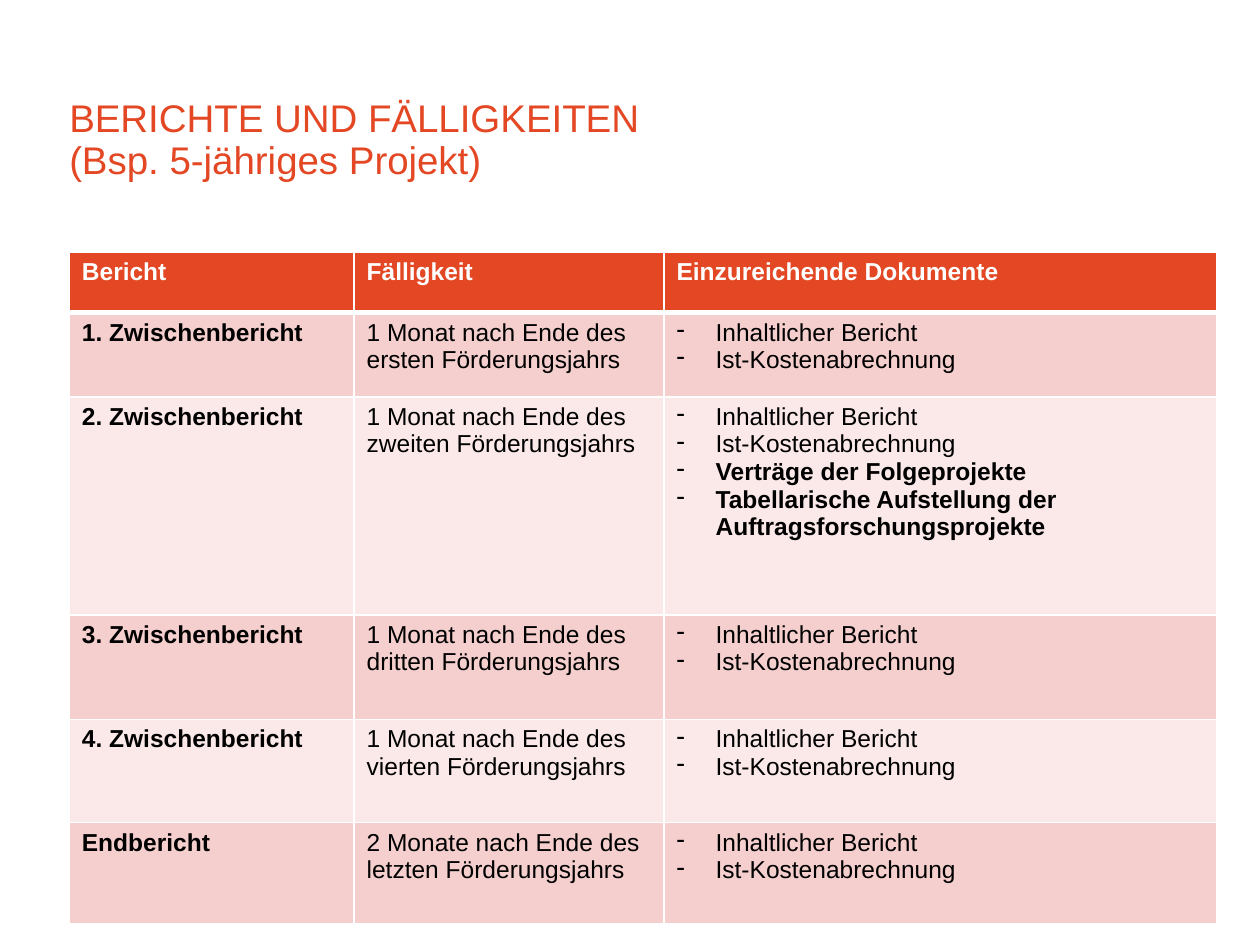
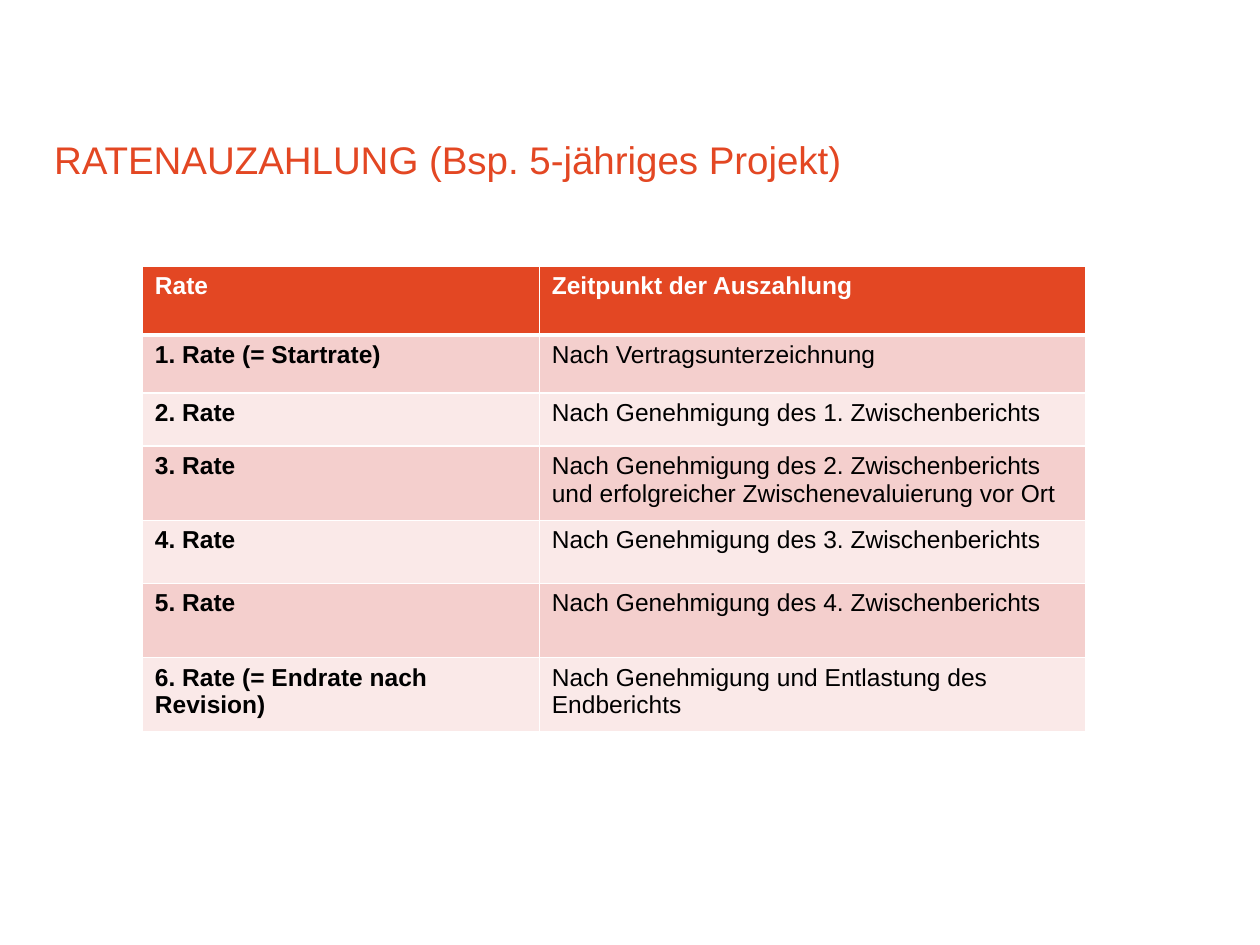
from dataclasses import dataclass

from lxml.etree import SubElement
from pptx import Presentation
from pptx.dml.color import RGBColor
from pptx.enum.text import MSO_VERTICAL_ANCHOR as Anchor
from pptx.oxml.ns import qn
from pptx.util import Emu, Inches, Pt

SLIDE_WIDTH, SLIDE_HEIGHT = Inches(10), Inches(7.5)
COLUMN, ROW = SLIDE_WIDTH / 100, SLIDE_HEIGHT / 75
FONT = "Arial"
ACCENT, WHITE, BLACK = "E34723", "FFFFFF", "000000"
BANDS = ("F4CFCD", "FAE9E8")
TITLE_TOP, TITLE_WIDTH, TITLE_HEIGHT = 6.9, 78.3, 7.6
BULLET_INDENT = 3.1


@dataclass(frozen=True)
class Entry:
    text: str
    bold: bool = False
    bullet: bool = False


@dataclass(frozen=True)
class Schedule:
    left: float
    top: float
    columns: tuple[float, ...]
    rows: tuple[float, ...]
    headings: tuple[str, ...]
    body: list[tuple[tuple[Entry, ...], ...]]


@dataclass(frozen=True)
class Page:
    title: str
    title_left: float
    schedule: Schedule


def color(value: str) -> RGBColor:
    return RGBColor.from_string(value)


def across(columns: float) -> Emu:
    return Emu(round(columns * COLUMN))


def down(rows: float) -> Emu:
    return Emu(round(rows * ROW))


def style_font(font, size: float, ink: str, bold: bool = False) -> None:
    font.name, font.size, font.bold = FONT, Pt(size), bold
    font.color.rgb = color(ink)


def add_title(slide, text: str, left: float) -> None:
    title = slide.shapes.add_textbox(
        across(left), down(TITLE_TOP), across(TITLE_WIDTH), down(TITLE_HEIGHT))
    frame = title.text_frame
    frame.word_wrap, frame.vertical_anchor = True, Anchor.BOTTOM
    frame.margin_left = frame.margin_right = 0
    frame.margin_top = frame.margin_bottom = 0
    frame.text = text
    heading = frame.paragraphs[0]
    heading.line_spacing = Pt(24)
    for run in heading.runs:
        style_font(run.font, 22, ACCENT)


def add_border(cell, side: str, points: float) -> None:
    border = SubElement(cell._tc.get_or_add_tcPr(), qn(f"a:ln{side}"), w=str(Pt(points)))
    fill = SubElement(border, qn("a:solidFill"))
    SubElement(fill, qn("a:srgbClr"), val=WHITE)


def add_bullet(paragraph) -> None:
    properties = paragraph._p.get_or_add_pPr()
    properties.set("marL", str(across(BULLET_INDENT)))
    properties.set("indent", str(-across(BULLET_INDENT)))
    SubElement(properties, qn("a:buFontTx"))
    SubElement(properties, qn("a:buChar"), char="-")


def fill_cell(cell, entries: tuple[Entry, ...], row: int) -> None:
    widths = {"L": 1, "R": 1, "T": 3 if row == 1 else 1, "B": 3 if row == 0 else 1}
    for side, points in widths.items():
        add_border(cell, side, points)
    cell.fill.solid()
    cell.fill.fore_color.rgb = color(BANDS[(row - 1) % 2] if row else ACCENT)
    cell.margin_left = cell.margin_right = across(1)
    cell.margin_top = cell.margin_bottom = down(0.5)
    cell.text_frame.text = "\n".join(entry.text for entry in entries)
    for paragraph, entry in zip(cell.text_frame.paragraphs, entries):
        if entry.bullet:
            add_bullet(paragraph)
        for run in paragraph.runs:
            style_font(run.font, 14, BLACK if row else WHITE, entry.bold)


def add_schedule(slide, schedule: Schedule) -> None:
    table = slide.shapes.add_table(
        len(schedule.rows), len(schedule.columns),
        across(schedule.left), down(schedule.top),
        across(sum(schedule.columns)), down(sum(schedule.rows))).table
    table.horz_banding = False
    for column, width in zip(table.columns, schedule.columns):
        column.width = across(width)
    for row, height in zip(table.rows, schedule.rows):
        row.height = down(height)
    headings = tuple((Entry(text, bold=True),) for text in schedule.headings)
    for row, contents in enumerate([headings, *schedule.body]):
        for column, entries in enumerate(contents):
            fill_cell(table.cell(row, column), entries, row)


def report(name: str, due: str, *extras: str) -> tuple[tuple[Entry, ...], ...]:
    standard = ("Inhaltlicher Bericht", "Ist-Kostenabrechnung")
    documents = [Entry(text, bullet=True) for text in standard]
    documents += [Entry(text, bold=True, bullet=True) for text in extras]
    return (Entry(name, bold=True),), (Entry(due),), tuple(documents)


def instalment(name: str, payout: str) -> tuple[tuple[Entry, ...], ...]:
    return (Entry(name, bold=True),), (Entry(payout),)


REPORTS = Schedule(
    left=5.5, top=20,
    columns=(22.6, 24.6, 43.9),
    rows=(4.8, 6.7, 17.3, 8.3, 8.2, 8),
    headings=("Bericht", "Fälligkeit", "Einzureichende Dokumente"),
    body=[
        report("1. Zwischenbericht", "1 Monat nach Ende des ersten Förderungsjahrs"),
        report("2. Zwischenbericht", "1 Monat nach Ende des zweiten Förderungsjahrs",
               "Verträge der Folgeprojekte",
               "Tabellarische Aufstellung der Auftragsforschungsprojekte"),
        report("3. Zwischenbericht", "1 Monat nach Ende des dritten Förderungsjahrs"),
        report("4. Zwischenbericht", "1 Monat nach Ende des vierten Förderungsjahrs"),
        report("Endbericht", "2 Monate nach Ende des letzten Förderungsjahrs"),
    ])

INSTALMENTS = Schedule(
    left=11.3, top=21.1,
    columns=(31.5, 43.4),
    rows=(5.5, 4.6, 4.2, 5.9, 5, 5.9, 5.9),
    headings=("Rate", "Zeitpunkt der Auszahlung"),
    body=[
        instalment("1. Rate (= Startrate)", "Nach Vertragsunterzeichnung"),
        instalment("2. Rate", "Nach Genehmigung des 1. Zwischenberichts"),
        instalment("3. Rate", "Nach Genehmigung des 2. Zwischenberichts "
                   "und erfolgreicher Zwischenevaluierung vor Ort"),
        instalment("4. Rate", "Nach Genehmigung des 3. Zwischenberichts"),
        instalment("5. Rate", "Nach Genehmigung des 4. Zwischenberichts"),
        instalment("6. Rate (= Endrate nach Revision)",
                   "Nach Genehmigung und Entlastung des Endberichts"),
    ])

PAGES = (
    Page("BERICHTE UND FÄLLIGKEITEN\v(Bsp. 5-jähriges Projekt)", 5.5, REPORTS),
    Page("RATENAUZAHLUNG (Bsp. 5-jähriges Projekt)", 4.3, INSTALMENTS),
)


def main() -> None:
    presentation = Presentation()
    presentation.slide_width, presentation.slide_height = SLIDE_WIDTH, SLIDE_HEIGHT
    blank = presentation.slide_layouts[6]
    for page in PAGES:
        slide = presentation.slides.add_slide(blank)
        add_title(slide, page.title, page.title_left)
        add_schedule(slide, page.schedule)
    presentation.save("out.pptx")


if __name__ == "__main__":
    main()
